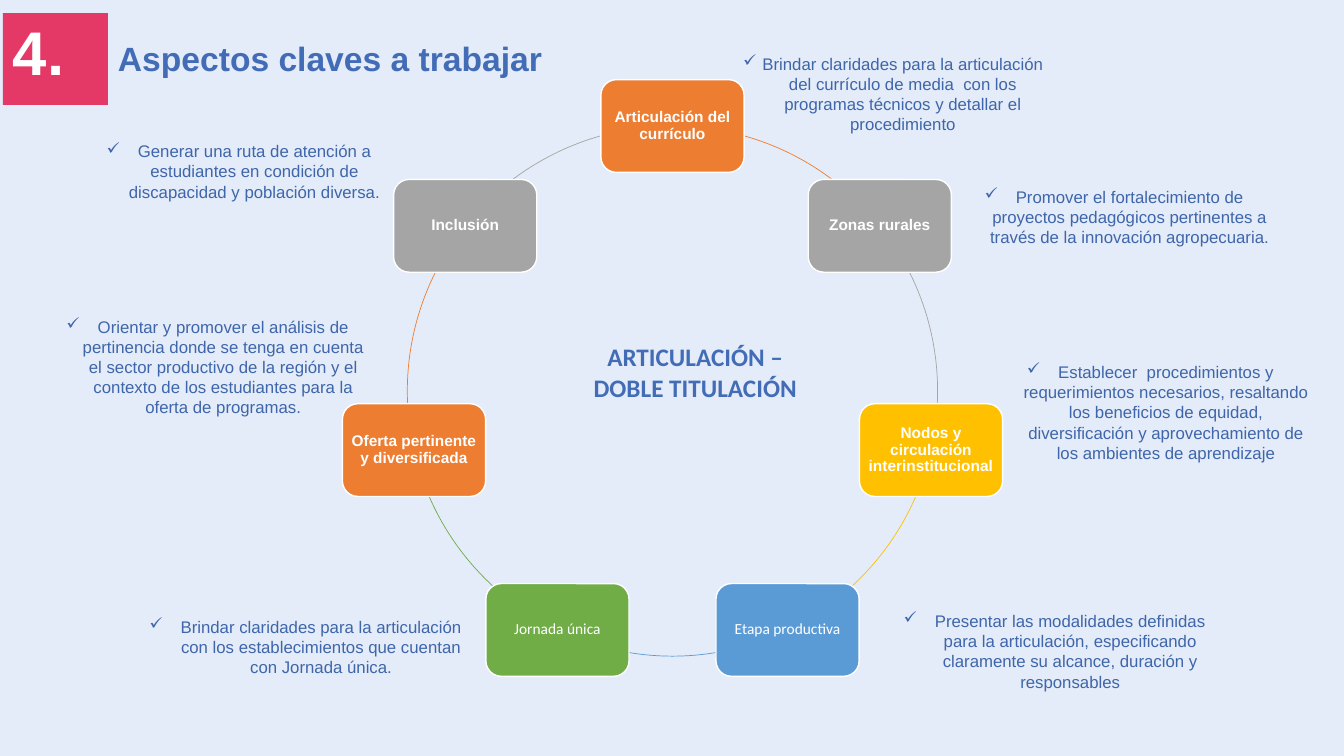
"""Build the slide on key aspects of the articulation and double degree programme."""
import math

import lxml.etree
import pptx
import pptx.dml.color
import pptx.enum.shapes
import pptx.enum.text
import pptx.oxml.ns
import pptx.util

Inches = pptx.util.Inches
Shapes = pptx.enum.shapes.MSO_SHAPE
Align = pptx.enum.text.PP_ALIGN
Anchor = pptx.enum.text.MSO_ANCHOR


def color(value):
    return pptx.dml.color.RGBColor.from_string(value)


def write(box, text, size, font, shade, bold=False, align=Align.CENTER):
    box.text_frame.word_wrap = True
    para = box.text_frame.paragraphs[0]
    para.text = text
    para.alignment = align
    para.font.size = pptx.util.Pt(size)
    para.font.name = font
    para.font.bold = bold
    para.font.color.rgb = color(shade)
    return para


deck = pptx.Presentation()
deck.slide_width, deck.slide_height = Inches(13.33), Inches(7.5)
page = deck.slides.add_slide(deck.slide_layouts[5])
page.background.fill.solid()
page.background.fill.fore_color.rgb = color("E3ECF8")

badge = page.shapes.add_shape(Shapes.RECTANGLE, Inches(0.03), Inches(0.13), Inches(1.04), Inches(0.91))
badge.shadow.inherit = False
badge.fill.solid()
badge.fill.fore_color.rgb = color("E43866")
badge.line.fill.background()

title = page.shapes.title
title.left, title.top, title.width, title.height = Inches(1.07), Inches(0.33), Inches(4.86), Inches(0.5)
title.text_frame.vertical_anchor = Anchor.MIDDLE
write(title, "Aspectos claves a trabajar", 24, "Arial", "436CB7", True, Align.LEFT)

number = page.shapes.add_textbox(Inches(0.03), Inches(0.09), Inches(1.31), Inches(0.84))
write(number, "4.", 44, "Arial", "FFFFFF", True, Align.LEFT)

nodes = [
    ("Articulación del currículo", "ED7D31", "Arial"),
    ("Zonas rurales", "A5A5A5", "Arial"),
    ("Nodos y circulación interinstitucional", "FFC000", "Arial"),
    ("Etapa productiva", "5B9BD5", "Calibri"),
    ("Jornada única", "70AD47", "Calibri"),
    ("Oferta pertinente y diversificada", "ED7D31", "Arial"),
    ("Inclusión", "A5A5A5", "Arial"),
]
center_x, center_y, radius = 6.67, 3.88, 2.63
node_width, node_height = 1.42, 0.92
step = 360 / len(nodes)
adjustment_per_degree = 0.6

for index, (label, shade, font) in enumerate(nodes):
    arc = page.shapes.add_shape(
        Shapes.ARC, Inches(center_x - radius), Inches(center_y - radius), Inches(2 * radius), Inches(2 * radius)
    )
    arc.shadow.inherit = False
    arc.fill.background()
    arc.line.color.rgb = color(shade)
    arc.line.width = pptx.util.Pt(0.5)
    for end in range(2):
        arc.adjustments[end] = ((index + end) * step - 90) % 360 * adjustment_per_degree

for index, (label, shade, font) in enumerate(nodes):
    angle = math.radians(index * step)
    left = center_x + radius * math.sin(angle) - node_width / 2
    top = center_y - radius * math.cos(angle) - node_height / 2
    node = page.shapes.add_shape(
        Shapes.ROUNDED_RECTANGLE, Inches(left), Inches(top), Inches(node_width), Inches(node_height)
    )
    node.shadow.inherit = False
    node.fill.solid()
    node.fill.fore_color.rgb = color(shade)
    node.line.color.rgb = color("FFFFFF")
    node.line.width = pptx.util.Pt(1)
    frame = node.text_frame
    frame.margin_left = frame.margin_right = Inches(0.02)
    frame.margin_top = frame.margin_bottom = Inches(0.05)
    frame.vertical_anchor = Anchor.MIDDLE
    write(node, label, 11, font, "FFFFFF", font == "Arial").line_spacing = 0.9

notes = [
    (7.17, 0.48, 0.91, 0.19, "Brindar claridades para la articulación del currículo de media  con los "
     "programas técnicos y detallar el procedimiento"),
    (0.68, 1.35, 0.91, 0.31, "Generar una ruta de atención a estudiantes en condición de discapacidad "
     "y población diversa."),
    (9.36, 1.8, 0.71, 0.31, "Promover el fortalecimiento de proyectos pedagógicos pertinentes a través "
     "de la innovación agropecuaria."),
    (0.37, 3.09, 1.11, 0.31, "Orientar y promover el análisis de pertinencia donde se tenga en cuenta el "
     "sector productivo de la región y el contexto de los estudiantes para la oferta de programas."),
    (1.34, 6.07, 0.91, 0.31, "Brindar claridades para la articulación con los establecimientos que "
     "cuentan con Jornada única."),
    (8.77, 6.01, 0.91, 0.31, "Presentar las modalidades definidas para la articulación, especificando "
     "claramente su alcance, duración y responsables"),
    (9.72, 3.54, 1.11, 0.31, "Establecer  procedimientos y requerimientos necesarios, resaltando los "
     "beneficios de equidad, diversificación y aprovechamiento de los ambientes de aprendizaje"),
]
for left, top, height, indent, text in notes:
    note = page.shapes.add_textbox(Inches(left), Inches(top), Inches(3.38), Inches(height))
    para = write(note, text, 12, "Arial", "3F65AA")
    properties = para._p.get_or_add_pPr()
    properties.set("marL", str(Inches(indent)))
    properties.set("indent", str(-Inches(indent)))
    bullet = lxml.etree.Element(pptx.oxml.ns.qn("a:buChar"), char="✓")
    properties.insert_element_before(bullet, "a:tabLst", "a:defRPr", "a:extLst")

hub = page.shapes.add_textbox(Inches(5.76), Inches(3.34), Inches(2.27), Inches(0.71))
write(hub, "ARTICULACIÓN – DOBLE TITULACIÓN", 18, "Calibri", "436CB7", True)

deck.save("out.pptx")
